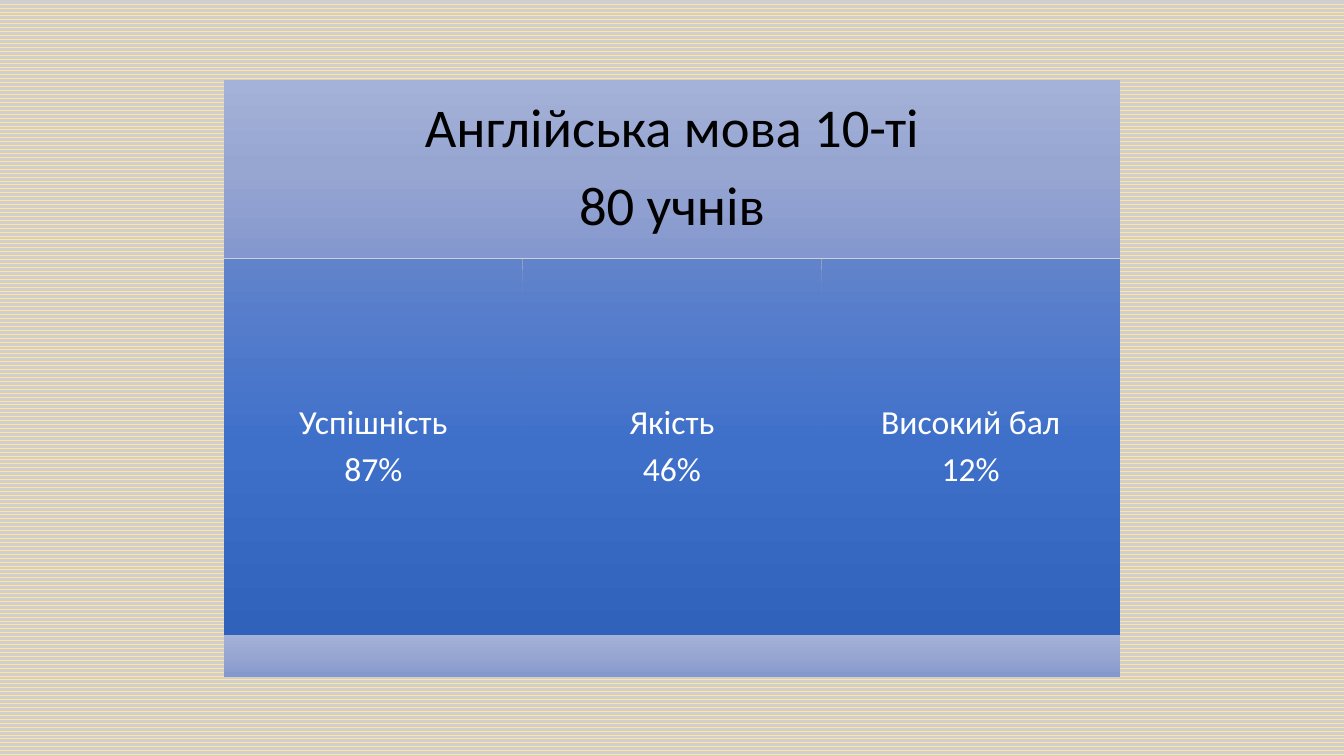
from copy import deepcopy
from pptx import Presentation
from pptx.dml.color import RGBColor as RGB
from pptx.enum.dml import MSO_PATTERN as PATTERN
from pptx.enum.shapes import MSO_SHAPE as SHAPE
from pptx.enum.text import MSO_ANCHOR as ANCHOR, MSO_AUTO_SIZE as AUTO, PP_ALIGN as ALIGN
from pptx.oxml.ns import qn
from pptx.util import Emu, Pt

HEADING = ["Англійська мова 10-ті", "80 учнів"]
RESULTS = [("Успішність", "87%"), ("Якість", "46%"), ("Високий бал", "12%")]

THEME = {
    "font": "Calibri",
    "wave": ("FFE699", "D0CECE"),
    "band": ("A4B2D9", "97A6D1", "8497CE"),
    "panel": ("6183CB", "3E70CA", "3062BB"),
    "heading": {"size": 39, "color": "000000", "inset": 16},
    "result": {"size": 24, "color": "FFFFFF", "inset": 10},
}
LINE_SPACING = 0.9
AFTER_RATIO = 0.35

PX = 9071
SLIDE_W, SLIDE_H = 1344, 756
LEFT, WIDTH = 224, 896
HEAD_TOP, HEAD_H = 80, 178
PANEL_TOP, PANEL_H = 259, 376
FOOT_TOP, FOOT_H = PANEL_TOP + PANEL_H, 42


def px(n):
    return Emu(round(n * PX))


def place(sp, x, y, w, h):
    box = {"left": x, "top": y, "width": w, "height": h}
    for name, value in box.items():
        setattr(sp, name, px(value))


def shade(sp, colors):
    sp.fill.gradient()
    sp.fill.gradient_angle = 270
    first = sp._element.spPr.find(".//" + qn("a:gs"))
    first.addnext(deepcopy(first))
    for i, (stop, color) in enumerate(zip(sp.fill.gradient_stops, colors)):
        stop.position = i / (len(colors) - 1)
        stop.color.rgb = RGB.from_string(color)
    sp.line.fill.background()


def write(sp, lines, style):
    tf = sp.text_frame
    inset = px(style["inset"])
    frame = {
        "word_wrap": True, "auto_size": AUTO.NONE, "vertical_anchor": ANCHOR.MIDDLE,
        "margin_left": inset, "margin_right": inset,
        "margin_top": inset, "margin_bottom": inset,
    }
    for name, value in frame.items():
        setattr(tf, name, value)
    para = {
        "alignment": ALIGN.CENTER, "line_spacing": LINE_SPACING,
        "space_before": Pt(0), "space_after": Pt(round(style["size"] * AFTER_RATIO)),
    }
    for i, line in enumerate(lines):
        p = tf.add_paragraph() if i else tf.paragraphs[0]
        for name, value in para.items():
            setattr(p, name, value)
        r = p.add_run()
        r.text = line
        r.font.name = THEME["font"]
        r.font.size = Pt(style["size"])
        r.font.color.rgb = RGB.from_string(style["color"])


def add_block(slide, x, y, w, h, colors):
    sp = slide.shapes.add_shape(SHAPE.RECTANGLE, px(x), px(y), px(w), px(h))
    sp.shadow.inherit = False
    shade(sp, colors)
    return sp


def main():
    prs = Presentation()
    prs.slide_width, prs.slide_height = px(SLIDE_W), px(SLIDE_H)
    slide = prs.slides.add_slide(prs.slide_layouts[5])

    bg = slide.background.fill
    bg.patterned()
    bg.pattern = PATTERN.WAVE
    bg.fore_color.rgb, bg.back_color.rgb = map(RGB.from_string, THEME["wave"])

    title = slide.shapes.title
    place(title, LEFT, HEAD_TOP, WIDTH, HEAD_H)
    shade(title, THEME["band"])
    write(title, HEADING, THEME["heading"])

    panel_w = WIDTH / len(RESULTS)
    for i, result in enumerate(RESULTS):
        panel = add_block(slide, LEFT + i * panel_w, PANEL_TOP, panel_w, PANEL_H, THEME["panel"])
        write(panel, result, THEME["result"])

    add_block(slide, LEFT, FOOT_TOP, WIDTH, FOOT_H, THEME["band"])
    prs.save("out.pptx")


if __name__ == "__main__":
    main()
